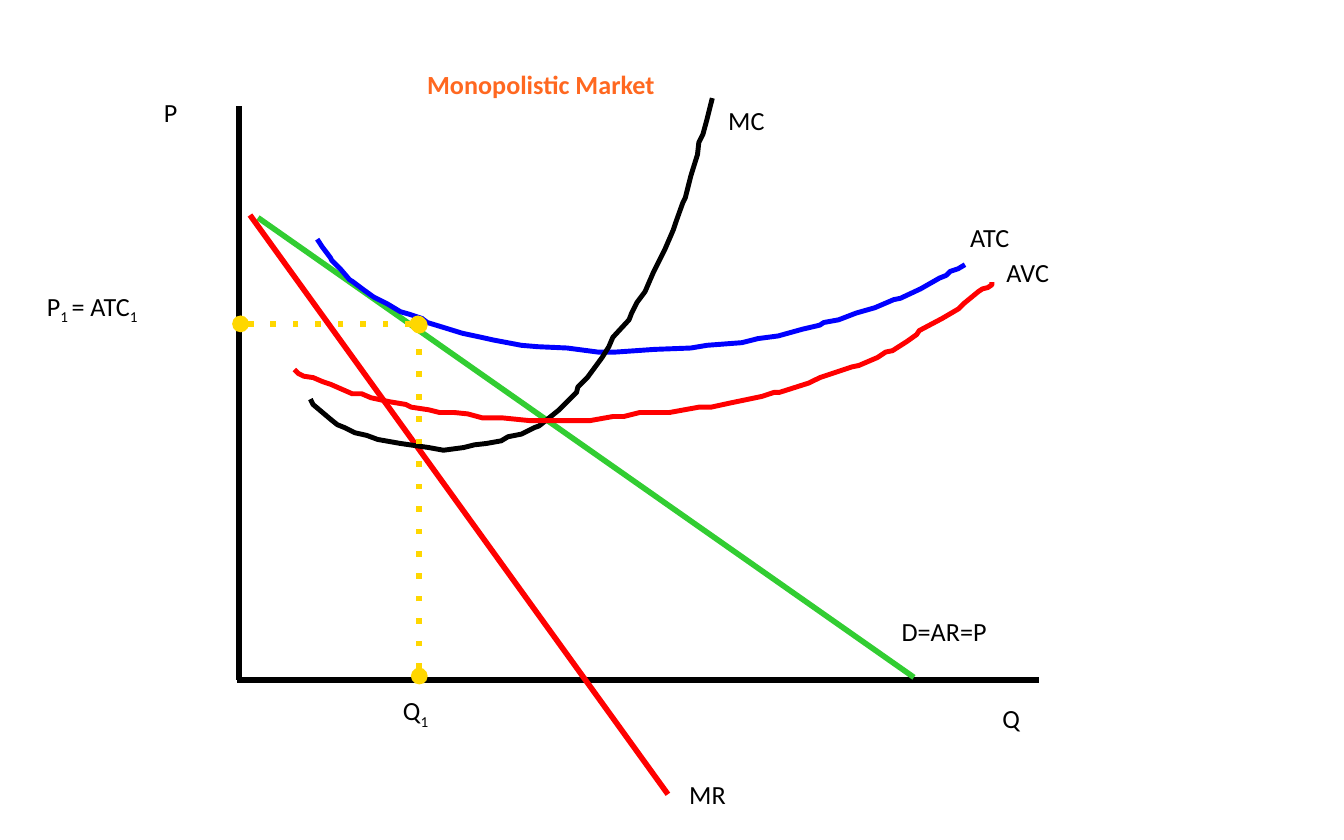
from lxml.etree import SubElement
from pptx import Presentation
from pptx.dml.color import RGBColor
from pptx.enum.shapes import MSO_CONNECTOR
from pptx.enum.text import MSO_AUTO_SIZE, PP_ALIGN
from pptx.oxml.ns import qn
from pptx.util import Inches, Pt

# The slide is a grid of 1000 columns by 625 rows.
COLUMNS, ROWS = 1000, 625
CELL = Inches(0.01)
LABEL_ROWS = 48

THEME = {
    "font": "Calibri", "text_size": 14, "line_width": 3, "curve_width": 2.63,
    "ink": "000000", "title": "FF6820", "demand": "32CD32", "red": "FF0000",
    "blue": "0000FF", "guide": "FFD700",
}

AXIS_X, AXIS_Y = 178, 506
QUANTITY, PRICE = 312, 241

# start, end, colour
LINES = [
    ((AXIS_X, 79), (AXIS_X, AXIS_Y), "ink"),
    ((AXIS_X - 2, AXIS_Y), (773, AXIS_Y), "ink"),
    ((192, 162), (680, 504), "demand"),
    ((186, 160), (497, 591), "red"),
]
GUIDES = [
    ((QUANTITY, 503), (QUANTITY, PRICE + 1), "guide"),
    ((QUANTITY - 1, PRICE), (AXIS_X + 1, PRICE), "guide"),
]

AVERAGE_TOTAL_COST = [
    (236, 178), (240, 184), (246, 192), (247, 194), (254, 201), (260, 208),
    (263, 210), (271, 216), (278, 221), (288, 226), (298, 232), (305, 234),
    (314, 237), (318, 240), (331, 244), (344, 248), (358, 251), (367, 253),
    (388, 257), (400, 258), (422, 259), (445, 262), (458, 262), (487, 260),
    (514, 259), (526, 257), (552, 255), (564, 252), (579, 250), (597, 245),
    (610, 242), (613, 240), (624, 238), (637, 233), (651, 229), (665, 223),
    (670, 222), (685, 215), (699, 207), (704, 205), (707, 202), (713, 200),
    (718, 197),
]
MARGINAL_COST = [
    (231, 297), (233, 301), (246, 312), (251, 316), (256, 318), (264, 322),
    (273, 324), (281, 327), (298, 330), (319, 333), (330, 335), (345, 333),
    (353, 331), (362, 330), (373, 328), (378, 325), (388, 323), (398, 318),
    (401, 317), (406, 313), (416, 305), (429, 292), (430, 288), (437, 281),
    (448, 266), (453, 258), (456, 251), (468, 238), (470, 233), (474, 225),
    (480, 217), (486, 203), (495, 185), (501, 171), (503, 165), (508, 151),
    (510, 147), (514, 131), (519, 115), (520, 106), (523, 100), (526, 89),
    (530, 73),
]
AVERAGE_VARIABLE_COST = [
    (219, 275), (222, 278), (226, 280), (233, 281), (240, 284), (246, 286),
    (262, 293), (269, 293), (276, 296), (290, 299), (302, 301), (306, 303),
    (319, 305), (327, 307), (338, 307), (348, 308), (359, 311), (374, 311),
    (394, 313), (439, 313), (456, 310), (464, 310), (476, 307), (498, 307),
    (520, 303), (529, 303), (543, 300), (567, 295), (576, 292), (580, 292),
    (602, 285), (610, 281), (634, 273), (639, 272), (653, 266), (659, 262),
    (664, 261), (675, 254), (682, 249), (684, 246), (701, 237), (713, 230),
    (717, 226), (728, 217), (731, 215), (735, 214), (738, 212), (738, 210),
]
CURVES = [
    (AVERAGE_TOTAL_COST, "blue"),
    (MARGINAL_COST, "ink"),
    (AVERAGE_VARIABLE_COST, "red"),
]

# left, top, width, pieces of text; every second piece is a subscript
LABELS = [
    (112, 67, 65, ["P"]),
    (736, 518, 75, ["Q"]),
    (661, 453, 181, ["D=AR=P"]),
    (503, 574, 93, ["MR"]),
    (712, 160, 93, ["ATC"]),
    (532, 73, 86, ["MC"]),
    (739, 186, 100, ["AVC"]),
    (25, 211, 161, ["P", "1 ", "= ATC", "1"]),
    (290, 512, 75, ["Q", "1"]),
]
TITLE = (284, 46, 237, ["Monopolistic Market"])


def color(name):
    return RGBColor.from_string(THEME[name])


def set_format(target, values):
    for name, value in values.items():
        setattr(target, name, value)


def add_line(slide, start, end, color_name):
    ends = [position * CELL for position in (*start, *end)]
    connector = slide.shapes.add_connector(MSO_CONNECTOR.STRAIGHT, *ends)
    connector.line.color.rgb = color(color_name)
    connector.line.width = Pt(THEME["line_width"])
    properties = connector._element.spPr
    SubElement(properties, qn("a:effectLst"))
    return properties.find(qn("a:ln"))


def add_guide(slide, start, end, color_name):
    """Draw a dotted line with a round marker at each end."""
    outline = add_line(slide, start, end, color_name)
    SubElement(outline, qn("a:prstDash"), val="dot")
    for marker in ("a:headEnd", "a:tailEnd"):
        SubElement(outline, qn(marker), type="oval")


def add_curve(slide, points, color_name):
    builder = slide.shapes.build_freeform(*points[0], scale=CELL)
    builder.add_line_segments(points[1:], close=False)
    shape = builder.convert_to_shape()
    shape.shadow.inherit = False
    shape.fill.background()
    shape.line.color.rgb = color(color_name)
    shape.line.width = Pt(THEME["curve_width"])


def add_label(slide, left, top, width, pieces, color_name="ink", bold=False,
              alignment=PP_ALIGN.LEFT, rows=LABEL_ROWS):
    place = [length * CELL for length in (left, top, width, rows)]
    frame = slide.shapes.add_textbox(*place).text_frame
    set_format(frame, {"word_wrap": True,
                       "auto_size": MSO_AUTO_SIZE.SHAPE_TO_FIT_TEXT})
    paragraph = frame.paragraphs[0]
    paragraph.alignment = alignment
    for index, piece in enumerate(pieces):
        run = paragraph.add_run()
        run.text = piece
        set_format(run.font, {"name": THEME["font"], "bold": bold,
                              "size": Pt(THEME["text_size"])})
        run.font.color.rgb = color(color_name)
        if index % 2:
            run._r.get_or_add_rPr().set("baseline", "-25000")


def main():
    presentation = Presentation()
    set_format(presentation, {"slide_width": COLUMNS * CELL,
                              "slide_height": ROWS * CELL})
    slide = presentation.slides.add_slide(presentation.slide_layouts[6])
    for line in LINES:
        add_line(slide, *line)
    for curve in CURVES:
        add_curve(slide, *curve)
    for guide in GUIDES:
        add_guide(slide, *guide)
    for label in LABELS:
        add_label(slide, *label)
    add_label(slide, *TITLE, color_name="title", bold=True,
              alignment=PP_ALIGN.CENTER, rows=82)
    presentation.save("out.pptx")


if __name__ == "__main__":
    main()
